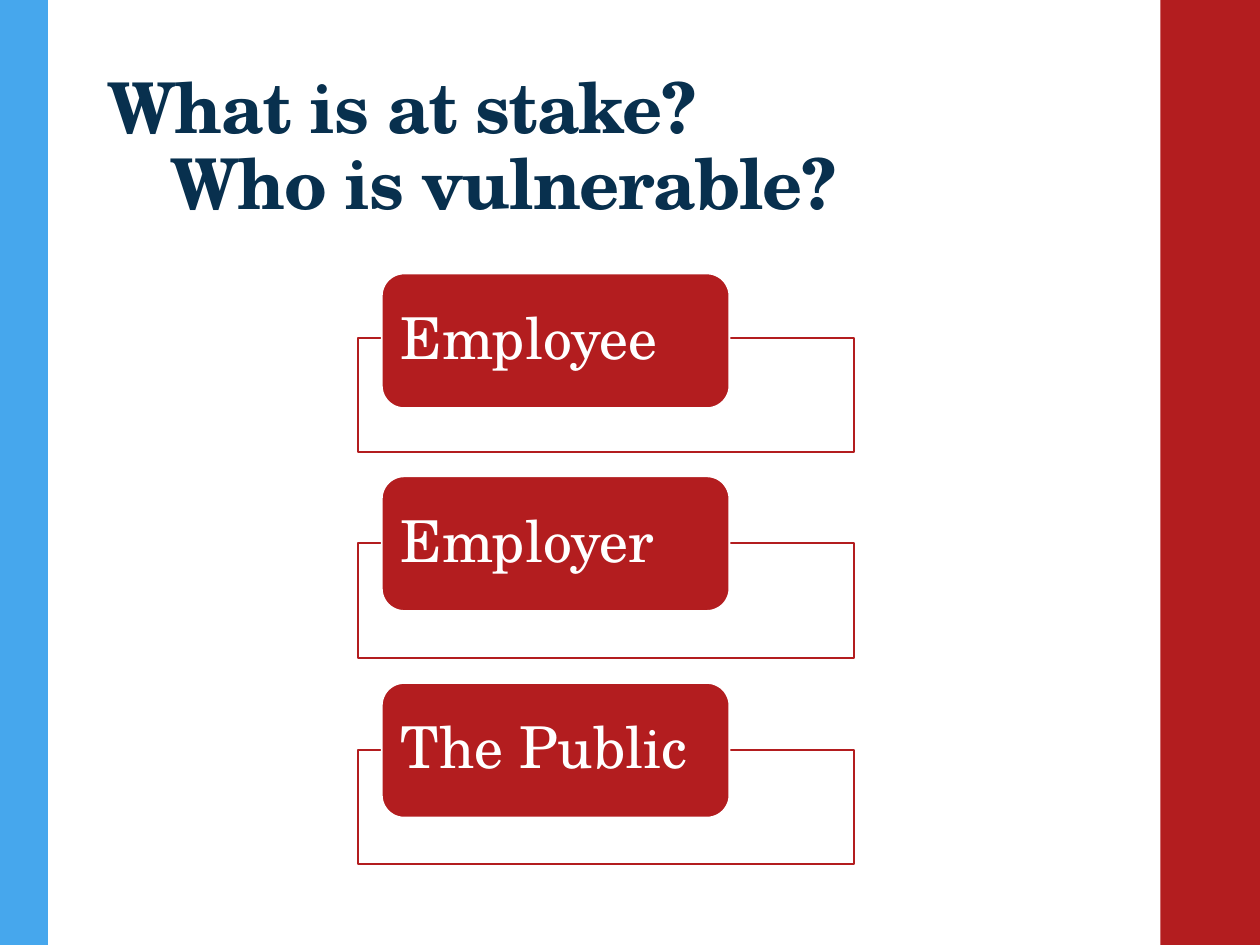
from lxml.etree import SubElement
from pptx import Presentation
from pptx.dml.color import RGBColor as RGB
from pptx.enum.shapes import MSO_SHAPE as SHAPE
from pptx.enum.text import MSO_ANCHOR as ANCHOR, MSO_AUTO_SIZE as FIT, PP_ALIGN as ALIGN
from pptx.oxml.ns import qn
from pptx.util import Inches, Pt

COLORS = {"red": "B31D1F", "blue": "46A7ED", "navy": "08304E", "white": "FFFFFF"}


def rgb(name):
    return RGB.from_string(COLORS[name])


def write(tf, text, size, color, font="TeX Gyre Schola", bold=False,
          anchor=ANCHOR.MIDDLE, insets=(0.1, 0.05), spacing=None):
    tf.word_wrap = True
    tf.auto_size = FIT.NONE
    tf.vertical_anchor = anchor
    tf.margin_left = tf.margin_right = Inches(insets[0])
    tf.margin_top = tf.margin_bottom = Inches(insets[1])
    p = tf.paragraphs[0]
    p.text = text
    p.alignment = ALIGN.LEFT
    p.line_spacing = 0.9
    for r in p.runs:
        r.font.name = font
        r.font.size = Pt(size)
        r.font.bold = bold
        r.font.color.rgb = rgb(color)
        if spacing is not None:
            r.font._element.set("spc", str(round(spacing * 100)))


class SlideBuilder:
    """Holds the deck's style and the slide being built."""

    line_width = Pt(1.1)

    def __init__(self, prs):
        self.slide = prs.slides.add_slide(prs.slide_layouts[5])

    def title(self, text, box):
        sp = self.slide.shapes.title
        sp.left, sp.top, sp.width, sp.height = map(Inches, box)
        write(sp.text_frame, text, size=40, color="navy", bold=True,
              anchor=ANCHOR.BOTTOM, spacing=-0.7)

    def shape(self, parent, kind, box, fill, line=None, alpha=None):
        sp = parent.shapes.add_shape(kind, *map(Inches, box))
        sp.shadow.inherit = False
        sp.fill.solid()
        sp.fill.fore_color.rgb = rgb(fill)
        if alpha is not None:
            clr = sp.fill._xPr.find(qn("a:solidFill"))[0]
            SubElement(clr, qn("a:alpha")).set("val", str(alpha * 1000))
        if line:
            sp.line.color.rgb = rgb(line)
            sp.line.width = self.line_width
        else:
            sp.line.fill.background()
        return sp

    def band(self, left, width, fill):
        self.shape(self.slide, SHAPE.RECTANGLE, (left, 0, width, 7.5), fill)

    def group(self):
        return self.slide.shapes.add_group_shape()

    def card(self, group, text, card_top, frame_top):
        self.shape(group, SHAPE.RECTANGLE, (2.84, frame_top, 3.94, 0.91),
                   "white", line="red", alpha=90)
        sp = self.shape(group, SHAPE.ROUNDED_RECTANGLE, (3.03, card_top, 2.76, 1.07),
                        "red", line="white")
        write(sp.text_frame, text, size=33, color="white", insets=(0.1, 0))


def main():
    prs = Presentation()
    prs.slide_width, prs.slide_height = Inches(10), Inches(7.5)
    s = SlideBuilder(prs)
    s.band(9.21, 0.8, "red")
    s.band(0, 0.38, "blue")
    s.title("What is at stake?\v\tWho is vulnerable?", (0.75, 0.38, 8.12, 1.45))
    cards = s.group()
    for text, card_top, frame_top in (("Employee", 2.17, 2.68),
                                      ("Employer", 3.78, 4.31),
                                      ("The Public", 5.42, 5.95)):
        s.card(cards, text, card_top, frame_top)
    prs.save("out.pptx")


if __name__ == "__main__":
    main()
